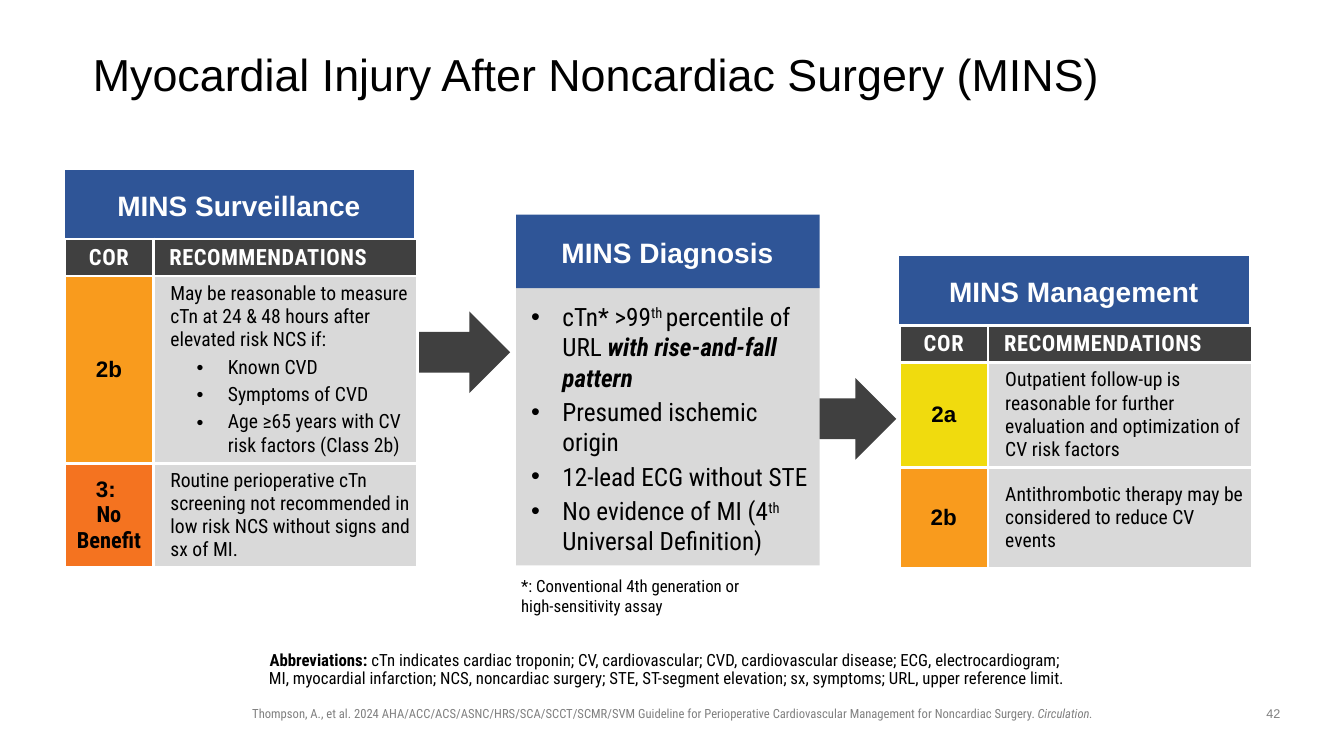
from lxml import etree
from pptx import Presentation
from pptx.dml.color import RGBColor
from pptx.enum.shapes import MSO_SHAPE as SHAPE
from pptx.enum.text import MSO_ANCHOR as ANCHOR, PP_ALIGN as ALIGN
from pptx.oxml.ns import qn
from pptx.util import Inches, Pt

COLORS = {"black": "000000", "white": "FFFFFF", "blue": "2F5597", "dark": "404040",
          "panel": "D9D9D9", "gray": "808080", "2a": "F0DB0E", "2b": "F99B1D",
          "3": "F47320"}
SANS, CONDENSED = "Arial", "Roboto Condensed"
BODY = {"name": CONDENSED, "size": 14}
COR = {"name": SANS, "size": 16, "bold": True}
HEADER = {"name": CONDENSED, "size": 16, "bold": True, "color": "white"}
BANNER = {"name": SANS, "size": 20, "bold": True, "color": "white"}
NOTE = {"name": CONDENSED, "size": 12}
FOOTER = {"name": CONDENSED, "size": 9, "color": "gray"}
SUPER = {"baseline": 30000}
INSET = (0.05, 0.05, 0.05, 0.05)
DEFAULT_INSET = (0.1, 0.05, 0.1, 0.05)
NO_INSET = (0, 0, 0, 0)


def rgb(key):
    return RGBColor.from_string(COLORS[key])


def add_run(p, text, fmt):
    """Add a run; a newline in the text becomes a line break."""
    for i, part in enumerate(text.split("\n")):
        if i:
            p.add_line_break()
        if not part:
            continue
        r = p.add_run()
        r.text = part
        r.font.color.rgb = rgb(fmt.get("color", "black"))
        for key, value in fmt.items():
            if key in ("baseline", "spc"):
                r._r.get_or_add_rPr().set(key, str(value))
            elif key == "size":
                r.font.size = Pt(value)
            elif key != "color":
                setattr(r.font, key, value)


def set_indent(p, left, first=0, bullet=False):
    pPr = p._p.get_or_add_pPr()
    pPr.set("marL", str(Inches(left)))
    pPr.set("indent", str(Inches(first)))
    if bullet:
        etree.SubElement(pPr, qn("a:buFont")).set("typeface", SANS)
        etree.SubElement(pPr, qn("a:buChar")).set("char", "•")


def write(tf, paragraphs, fmt, **para):
    """Fill a text frame; a paragraph is a string or a list of (text, format) runs."""
    for i, runs in enumerate(paragraphs):
        p = tf.paragraphs[0] if i == 0 else tf.add_paragraph()
        if "indent" in para:
            set_indent(p, *para["indent"])
        for key in ("alignment", "line_spacing", "space_after"):
            if key in para:
                setattr(p, key, para[key])
        for text, extra in [(runs, {})] if isinstance(runs, str) else runs:
            add_run(p, text, {**fmt, **extra})


def set_insets(frame, insets):
    for side, value in zip(("left", "top", "right", "bottom"), insets):
        setattr(frame, f"margin_{side}", Inches(value))


def add_text(s, box, paragraphs, fmt, insets=DEFAULT_INSET, anchor=ANCHOR.TOP, **para):
    tf = s.shapes.add_textbox(*map(Inches, box)).text_frame
    tf.word_wrap = True
    tf.vertical_anchor = anchor
    set_insets(tf, insets)
    write(tf, paragraphs, fmt, **para)


def add_block(s, kind, box, fill, outlined=False):
    sp = s.shapes.add_shape(kind, *map(Inches, box))
    sp.shadow.inherit = False
    sp.fill.solid()
    sp.fill.fore_color.rgb = rgb(fill)
    if outlined:
        sp.line.color.rgb = rgb("white")
        sp.line.width = Pt(3)
    else:
        sp.line.fill.background()


def add_banner(s, x, y, w, text, outlined=False):
    add_block(s, SHAPE.RECTANGLE, (x, y, w, 0.73), "blue", outlined)
    add_text(s, (x + 0.03, y + 0.1, w - 0.07, 0.58), [text], BANNER, NO_INSET,
             ANCHOR.MIDDLE, alignment=ALIGN.CENTER, line_spacing=0.9)


def style_cell(cell, fill, insets=INSET):
    cell.fill.solid()
    cell.fill.fore_color.rgb = rgb(fill)
    cell.vertical_anchor = ANCHOR.MIDDLE
    set_insets(cell, insets)
    tcPr = cell._tc.get_or_add_tcPr()
    for i, side in enumerate(("lnL", "lnR", "lnT", "lnB")):
        ln = etree.Element(qn(f"a:{side}"), w=str(Pt(2.25)))
        solid = etree.SubElement(ln, qn("a:solidFill"))
        etree.SubElement(solid, qn("a:srgbClr")).set("val", COLORS["white"])
        tcPr.insert(i, ln)


def add_recommendations(s, x, y, heights, rows):
    """Table of (class runs, fill, text, bullets) rows under a COR header."""
    table = s.shapes.add_table(len(heights), 2, Inches(x), Inches(y), Inches(3.5),
                               Inches(sum(heights))).table
    for column, width in zip(table.columns, (0.88, 2.62)):
        column.width = Inches(width)
    for row, height in zip(table.rows, heights):
        row.height = Inches(height)
    for col in (0, 1):
        style_cell(table.cell(0, col), "dark", DEFAULT_INSET)
    write(table.cell(0, 0).text_frame, ["COR"], {**HEADER, "spc": 50},
          alignment=ALIGN.CENTER)
    write(table.cell(0, 1).text_frame, ["RECOMMENDATIONS"], {**HEADER, "spc": 40},
          indent=(0.06,))
    for i, (cor, fill, text, bullets) in enumerate(rows, 1):
        style_cell(table.cell(i, 0), fill)
        write(table.cell(i, 0).text_frame, [cor], COR, alignment=ALIGN.CENTER)
        style_cell(table.cell(i, 1), "panel")
        tf = table.cell(i, 1).text_frame
        write(tf, [text], BODY, indent=(0.12,), space_after=Pt(3))
        for bullet in bullets:
            p = tf.add_paragraph()
            set_indent(p, 0.69, -0.31, True)
            p.space_after = Pt(3)
            add_run(p, bullet, BODY)


def add_title(s, text):
    title = s.shapes.title
    for key, value in zip(("left", "top", "width", "height"), (0.92, 0.4, 11.5, 0.72)):
        setattr(title, key, Inches(value))
    tf = title.text_frame
    tf.word_wrap = True
    tf.vertical_anchor = ANCHOR.MIDDLE
    set_insets(tf, NO_INSET)
    write(tf, [text], {"name": SANS, "size": 32}, alignment=ALIGN.LEFT, line_spacing=0.9)


def main():
    prs = Presentation()
    prs.slide_width, prs.slide_height = Inches(13.33), Inches(7.5)
    s = prs.slides.add_slide(prs.slide_layouts[5])
    add_title(s, "Myocardial Injury After Noncardiac Surgery (MINS)")

    for x, y in ((3.63, 3.09), (7.46, 3.75)):
        add_block(s, SHAPE.RIGHT_ARROW, (x + 0.52 - 0.52, y, 1.43, 0.81), "dark")

    add_banner(s, 0.62, 1.67, 3.51, "MINS Surveillance", outlined=True)
    add_recommendations(s, 0.64, 2.37, (0.36, 1.83, 1.03), [
        ("2b", "2b", "May be reasonable to measure cTn at 24 & 48 hours after elevated "
         "risk NCS if:", ["Known CVD", "Symptoms of CVD",
                          "Age ≥65 years with CV risk factors (Class 2b)"]),
        ([("3: \n", {}), ("No Benefit", {"name": CONDENSED})], "3",
         "Routine perioperative cTn screening not recommended in low risk NCS without "
         "signs and sx of MI.", []),
    ])

    add_block(s, SHAPE.RECTANGLE, (5.12, 2.83, 3.01, 2.78), "panel")
    add_banner(s, 5.12, 2.13, 3.01, "MINS Diagnosis")
    add_text(s, (5.17, 2.94, 2.98, 2.65), [
        [("cTn* >99", {}), ("th ", SUPER), ("percentile of URL ", {}),
         ("with rise-and-fall pattern", {"bold": True, "italic": True})],
        "Presumed ischemic origin",
        "12-lead ECG without STE",
        [("No evidence of MI (4", {}), ("th", SUPER), (" Universal Definition)", {})],
    ], {"name": CONDENSED, "size": 18}, indent=(0.31, -0.31, True), space_after=Pt(3))
    add_text(s, (5.07, 5.66, 3.08, 0.5),
             ["*: Conventional 4th generation or \nhigh-sensitivity assay"], NOTE)

    add_banner(s, 8.9, 2.52, 3.51, "MINS Management", outlined=True)
    add_recommendations(s, 8.92, 3.23, (0.36, 1.04, 1), [
        ("2a", "2a", "Outpatient follow-up is reasonable for further evaluation and "
         "optimization of CV risk factors", []),
        ("2b", "2b", "Antithrombotic therapy may be considered to reduce CV events", []),
    ])

    add_text(s, (1.88, 6.42, 9.57, 0.46), [[
        ("Abbreviations: ", {"bold": True}),
        ("cTn indicates cardiac troponin; CV, cardiovascular; CVD, cardiovascular disease; "
         "ECG, electrocardiogram; \nMI, myocardial infarction; NCS, noncardiac surgery; "
         "STE, ST-segment elevation; sx, symptoms; URL, upper reference limit.", {})]],
        NOTE, (0, 0.05, 0.1, 0.05), ANCHOR.BOTTOM, alignment=ALIGN.CENTER, line_spacing=0.9)
    add_text(s, (2.36, 6.95, 8.62, 0.25), [[
        ("Thompson, A., et al. 2024 AHA/ACC/ACS/ASNC/HRS/SCA/SCCT/SCMR/SVM Guideline for "
         "Perioperative Cardiovascular Management for Noncardiac Surgery. ", {}),
        ("Circulation.", {"italic": True})]], FOOTER, alignment=ALIGN.CENTER)
    add_text(s, (12.42, 6.95, 0.42, 0.26), ["42"], {**FOOTER, "name": SANS},
             alignment=ALIGN.CENTER)
    prs.save("out.pptx")


if __name__ == "__main__":
    main()
